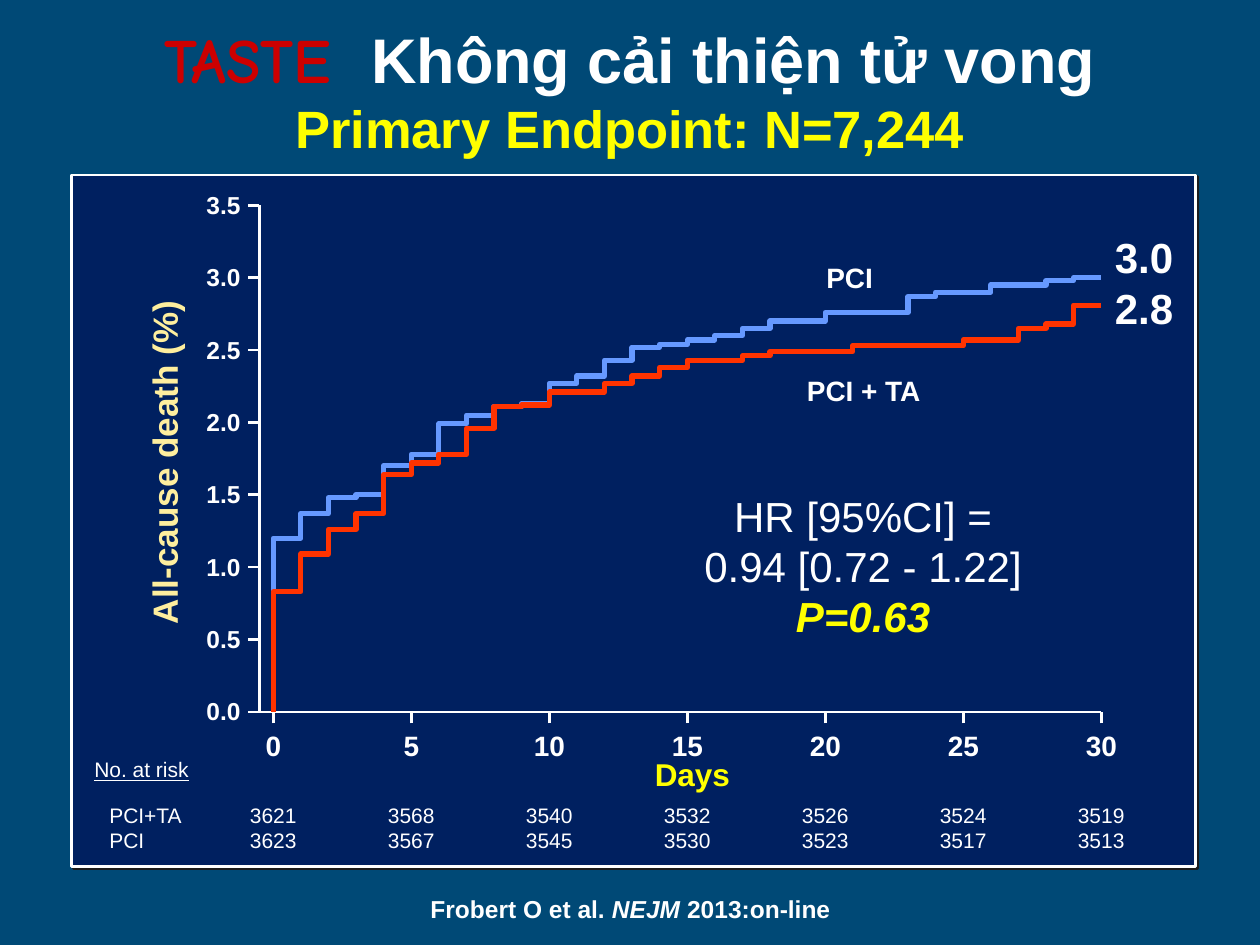
from lxml import etree
from pptx import Presentation
from pptx.dml.color import RGBColor
from pptx.enum.shapes import MSO_CONNECTOR, MSO_SHAPE
from pptx.enum.text import MSO_ANCHOR, MSO_AUTO_SIZE, PP_ALIGN
from pptx.oxml import parse_xml
from pptx.oxml.ns import nsdecls, qn
from pptx.util import Pt

CENTER, LEFT, RIGHT = PP_ALIGN.CENTER, PP_ALIGN.LEFT, PP_ALIGN.RIGHT
RECTANGLE = MSO_SHAPE.RECTANGLE
STRAIGHT = MSO_CONNECTOR.STRAIGHT
MIDDLE, TOP = MSO_ANCHOR.MIDDLE, MSO_ANCHOR.TOP
GROW, FIXED = MSO_AUTO_SIZE.SHAPE_TO_FIT_TEXT, MSO_AUTO_SIZE.NONE

WHITE, YELLOW = "FFFFFF", "FFFF00"
PCI_BLUE, TA_RED = "6699FF", "FF3300"

ORIGIN_X, ORIGIN_Y = 156.2, 406.8
DAY_WIDTH, PERCENT_HEIGHT = 15.77, 82.7
AXIS_X, TICK = 148.3, 6.5

PCI_LEVELS = [
    1.2, 1.37, 1.48, 1.5, 1.7, 1.78, 1.99, 2.05, 2.11, 2.13,
    2.27, 2.32, 2.43, 2.52, 2.54, 2.57, 2.6, 2.65, 2.7, 2.7,
    2.76, 2.76, 2.76, 2.87, 2.9, 2.9, 2.95, 2.95, 2.98, 3.0,
]
TA_LEVELS = [
    0.83, 1.09, 1.26, 1.37, 1.64, 1.72, 1.78, 1.96, 2.11, 2.12,
    2.21, 2.21, 2.27, 2.32, 2.38, 2.43, 2.43, 2.46, 2.49, 2.49,
    2.49, 2.53, 2.53, 2.53, 2.53, 2.57, 2.57, 2.65, 2.68, 2.81,
]
AT_RISK = {
    0: ("3621", "3623"), 5: ("3568", "3567"), 10: ("3540", "3545"),
    15: ("3532", "3530"), 20: ("3526", "3523"), 25: ("3524", "3517"),
    30: ("3519", "3513"),
}


def color(hex_string):
    return RGBColor.from_string(hex_string)


def day_x(day):
    return ORIGIN_X + day * DAY_WIDTH


def percent_y(percent):
    return ORIGIN_Y - percent * PERCENT_HEIGHT


def span(text, size=12, ink=WHITE, font="Arial", bold=False, italic=False, underline=False):
    def write(paragraph):
        run = paragraph.add_run()
        run.text = text
        run.font.size = Pt(size)
        run.font.name = font
        run.font.bold = bold
        run.font.italic = italic
        run.font.underline = underline
        run.font.color.rgb = color(ink)
    return write


class SurvivalSlide:
    def __init__(self, slide, background):
        self.slide = slide
        self.shapes = slide.shapes
        slide.background.fill.solid()
        slide.background.fill.fore_color.rgb = color(background)

    def fill_frame(self, frame, lines, align, inset, wrap, anchor, sizing):
        frame.auto_size = sizing
        frame.word_wrap = wrap
        frame.vertical_anchor = anchor
        frame.margin_left = frame.margin_right = Pt(inset[0])
        frame.margin_top = frame.margin_bottom = Pt(inset[1])
        for index, spans in enumerate(lines):
            paragraph = frame.add_paragraph() if index else frame.paragraphs[0]
            paragraph.alignment = align
            for write in spans:
                write(paragraph)

    def title(self, left, top, width, height, lines):
        heading = self.shapes.title
        heading.left, heading.top = Pt(left), Pt(top)
        heading.width, heading.height = Pt(width), Pt(height)
        self.fill_frame(heading.text_frame, lines, CENTER, (3.6, 3.6), True, MIDDLE, FIXED)

    def text(self, left, top, width, height, *lines, align=CENTER, inset=(7.2, 3.6),
             wrap=False, rotation=0):
        box = self.shapes.add_textbox(Pt(left), Pt(top), Pt(width), Pt(height))
        box.rotation = rotation
        self.fill_frame(box.text_frame, lines, align, inset, wrap, TOP, GROW)

    def panel(self, left, top, width, height, fill, outline):
        panel = self.shapes.add_shape(RECTANGLE, Pt(left), Pt(top), Pt(width), Pt(height))
        panel.fill.solid()
        panel.fill.fore_color.rgb = color(fill)
        panel.line.color.rgb = color(outline)
        panel.line.width = Pt(1.5)
        panel.shadow.inherit = False
        effects = panel._element.spPr.find(qn("a:effectLst"))
        effects.append(parse_xml(
            f'<a:outerShdw {nsdecls("a")} dist="17961" dir="2700000" algn="ctr" '
            'rotWithShape="0"><a:srgbClr val="1C1C1C"/></a:outerShdw>'))

    def line(self, x1, y1, x2, y2):
        rule = self.shapes.add_connector(STRAIGHT, Pt(x1), Pt(y1), Pt(x2), Pt(y2))
        rule.line.color.rgb = color(WHITE)
        rule.line.width = Pt(1.5)
        etree.SubElement(rule._element.spPr, qn("a:effectLst"))

    def curve(self, levels, ink):
        points = []
        for day, level in enumerate(levels):
            points += [(day, level), (day + 1, level)]
        builder = self.shapes.build_freeform(Pt(day_x(0)), Pt(percent_y(0)))
        builder.add_line_segments(
            [(Pt(day_x(day)), Pt(percent_y(level))) for day, level in points], close=False)
        curve = builder.convert_to_shape()
        curve.fill.background()
        curve.line.color.rgb = color(ink)
        curve.line.width = Pt(3)
        curve.shadow.inherit = False


def main():
    deck = Presentation()
    deck.slide_width, deck.slide_height = Pt(720), Pt(540)
    page = SurvivalSlide(deck.slides.add_slide(deck.slide_layouts[5]), "004976")

    page.title(36, 6.5, 648, 90, [
        [span("TASTE ", size=36, ink="CC0000", font="Comic Neue", bold=True),
         span(" Không cải thiện tử vong", size=36, bold=True)],
        [span("Primary Endpoint: N=7,244", size=30, ink=YELLOW, bold=True)],
    ])
    page.panel(41, 100, 642.3, 395.3, "002060", WHITE)

    page.line(AXIS_X, percent_y(3.5), AXIS_X, ORIGIN_Y)
    page.line(AXIS_X, ORIGIN_Y, day_x(30), ORIGIN_Y)
    for step in range(8):
        percent = step / 2
        y = percent_y(percent)
        page.line(AXIS_X - TICK, y, AXIS_X, y)
        page.text(118, y - 8.8, 19.5, 17, [span(f"{percent:.1f}", size=14, bold=True)],
                  align=RIGHT, inset=(0, 0))
    for day, counts in AT_RISK.items():
        x = day_x(day)
        page.line(x, ORIGIN_Y + TICK, x, ORIGIN_Y)
        page.text(x - 9, 416.2, 18, 19.4, [span(str(day), size=16, bold=True)], inset=(0, 0))
        page.text(x - 20.5, 455, 41, 36, *[[span(count)] for count in counts])

    page.curve(PCI_LEVELS, PCI_BLUE)
    page.curve(TA_LEVELS, TA_RED)

    page.text(-6.5, 248.4, 201, 31.7,
              [span("All-cause death (%)", size=20, ink="FEEE9E", bold=True)], rotation=270)
    page.text(366.5, 427.7, 58.3, 29, [span("Days", size=18, ink=YELLOW, bold=True)])
    page.text(46.8, 429, 69, 21.6, [span("No. at risk", underline=True)], align=LEFT)
    page.text(55.4, 455, 56, 36, [span("PCI+TA")], [span("PCI")], align=LEFT)

    page.text(465, 145.4, 41, 26.6, [span("PCI", size=16, bold=True)])
    page.text(453.6, 210.2, 80, 26.6, [span("PCI + TA", size=16, bold=True)])
    page.text(630, 129, 48.2, 36, [span("3.0", size=24, bold=True)], align=LEFT)
    page.text(630, 157.7, 48.2, 36, [span("2.8", size=24, bold=True)], align=LEFT)
    page.text(377.3, 276.5, 231.8, 94.3,
              [span("HR [95%CI] =", size=24)],
              [span("0.94 [0.72 - 1.22]", size=24)],
              [span("P=0.63", size=24, ink=YELLOW, bold=True, italic=True)], wrap=True)
    page.text(105.8, 507.6, 509, 24.5,
              [span("Frobert O et al. ", size=14, bold=True),
               span("NEJM ", size=14, bold=True, italic=True),
               span("2013:on-line", size=14, bold=True)], wrap=True)

    deck.save("out.pptx")


if __name__ == "__main__":
    main()
